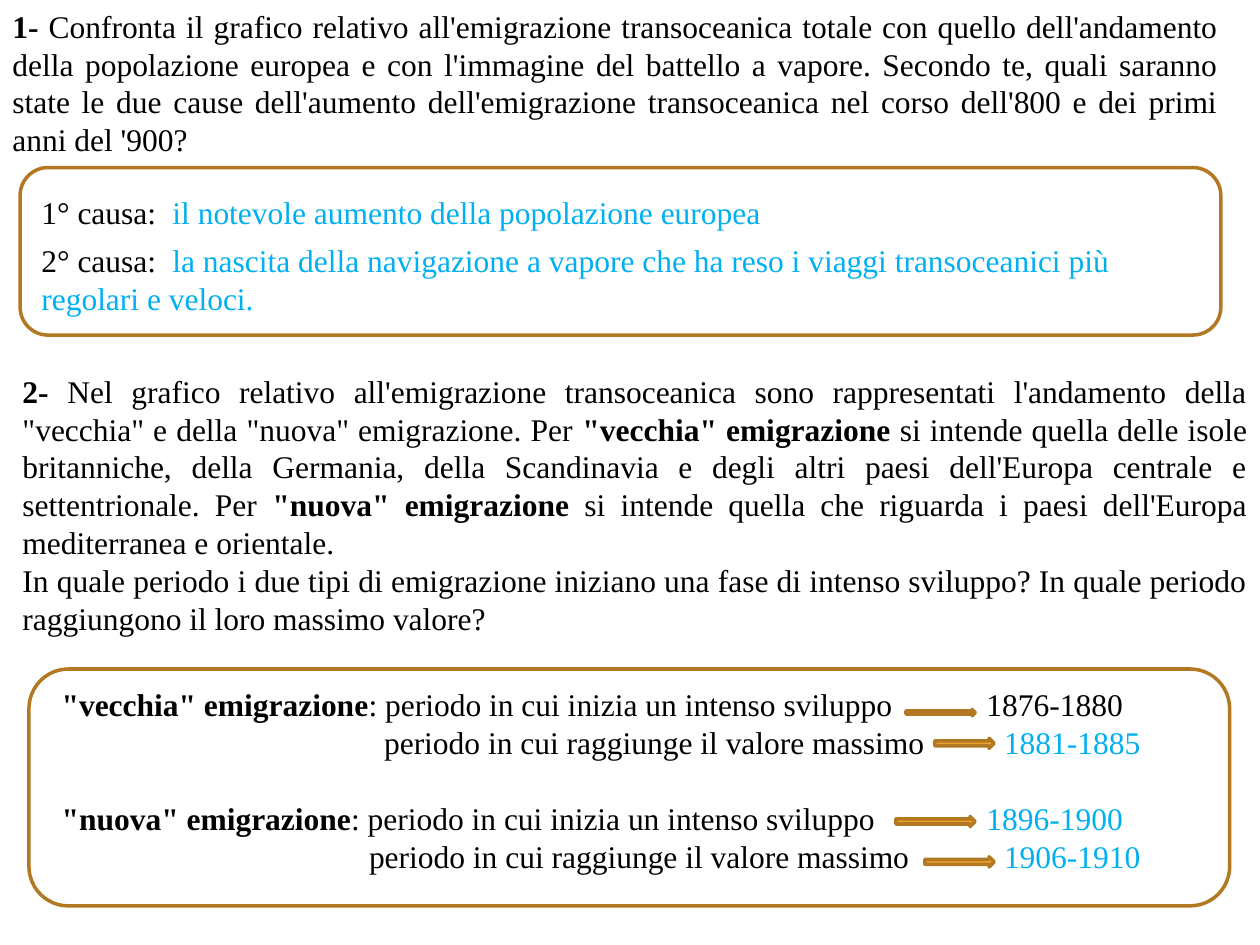
from lxml.etree import SubElement
from pptx import Presentation
from pptx.dml.color import RGBColor as Rgb
from pptx.enum.shapes import MSO_SHAPE as Shape
from pptx.enum.text import MSO_ANCHOR as Anchor, PP_ALIGN as Align
from pptx.oxml.ns import qn
from pptx.util import Inches, Pt

WIDE, HIGH = Inches(10), Inches(7.5)
FONT, SIZE = "Times New Roman", 18
INK = {"text": "000000", "reply": "00B0F0", "edge": "B27822",
       "arrow": "F0A22E", "paper": "FFFFFF"}


def hue(name):
    return Rgb.from_string(INK[name])


def place(left, top, width, height):
    """Turn percent of the slide's width and height into lengths."""
    return [round(share * side / 100) for share, side
            in zip((left, top, width, height), (WIDE, HIGH, WIDE, HIGH))]


def add_form(slide, kind, spot, fill):
    form = slide.shapes.add_shape(kind, *place(*spot))
    form.shadow.inherit = False
    form.fill.solid()
    form.fill.fore_color.rgb = hue(fill)
    form.line.color.rgb = hue("edge")
    form.line.width = Pt(2)


def set_tabs(para, stops):
    tabs = SubElement(para._p.get_or_add_pPr(), qn("a:tabLst"))
    for stop in stops:
        SubElement(tabs, qn("a:tab"), pos=str(Inches(stop)), algn="l")


def fill_para(para, parts):
    """Write (text, style) parts; the style is plain, bold or reply."""
    for text, style in parts:
        run = para.add_run()
        run.text = text
        run.font.name = FONT
        run.font.size = Pt(SIZE)
        run.font.bold = style == "bold"
        run.font.color.rgb = hue("reply" if style == "reply" else "text")


def add_text(slide, spot, lines, align=Align.LEFT, anchor=Anchor.MIDDLE):
    """Add a text box; each line holds parts, tab stops, space before."""
    frame = slide.shapes.add_textbox(*place(*spot)).text_frame
    frame.word_wrap = True
    frame.vertical_anchor = anchor
    for num, (parts, stops, gap) in enumerate(lines):
        para = frame.add_paragraph() if num else frame.paragraphs[0]
        para.alignment = align
        if gap:
            para.space_before = Pt(gap)
        if stops:
            set_tabs(para, stops)
        fill_para(para, parts)


def add_task(slide, spot, *paras):
    add_text(slide, spot, [(parts, (), 0) for parts in paras], Align.JUSTIFY)


def add_cause(slide, spot, *causes):
    lines = [([(f"{num}° causa:\t", "plain"), (cause, "reply")],
              [1.04], 6 if num > 1 else 0)
             for num, cause in enumerate(causes, 1)]
    add_text(slide, spot, lines)


def add_dates(slide, spot, groups):
    """List the start and peak of each group, with the dates at tab stops."""
    lines = []
    for num, (name, start, peak, style, indent) in enumerate(groups):
        lines += [
            ([(f'"{name}" emigrazione', "bold"),
              (": periodo in cui inizia un intenso sviluppo\t", "plain"),
              (start, style)], [7.34], 22 if num else 0),
            ([("\tperiodo in cui raggiunge il valore massimo\t", "plain"),
              (peak, "reply")], [indent, 7.48], 0)]
    add_text(slide, spot, lines, anchor=Anchor.TOP)


def main():
    deck = Presentation()
    deck.slide_width, deck.slide_height = WIDE, HIGH
    slide = deck.slides.add_slide(deck.slide_layouts[6])

    add_task(slide, (0, 0, 97.7, 17.47), [
        ("1- ", "bold"),
        ("Confronta il grafico relativo all'emigrazione transoceanica totale "
         "con quello dell'andamento della popolazione europea e con "
         "l'immagine del battello a vapore. Secondo te, quali saranno state "
         "le due cause dell'aumento dell'emigrazione transoceanica nel corso "
         "dell'800 e dei primi anni del '900?", "plain")])
    add_form(slide, Shape.ROUNDED_RECTANGLE, (1.6, 17.73, 95.3, 17.73), "paper")
    add_cause(slide, (2.3, 19.73, 93.8, 14.53),
              "il notevole aumento della popolazione europea",
              "la nascita della navigazione a vapore che ha reso i viaggi "
              "transoceanici più regolari e veloci.")

    add_task(slide, (0.8, 38.53, 99.2, 29.6), [
        ("2- ", "bold"),
        ("Nel grafico relativo all'emigrazione transoceanica sono "
         "rappresentati l'andamento della \"vecchia\" e della \"nuova\" "
         "emigrazione. Per ", "plain"),
        ('"vecchia" emigrazione', "bold"),
        (" si intende quella delle isole britanniche, della Germania, della "
         "Scandinavia e degli altri paesi dell'Europa centrale e "
         "settentrionale. Per ", "plain"),
        ('"nuova" emigrazione', "bold"),
        (" si intende quella che riguarda i paesi dell'Europa mediterranea "
         "e orientale.", "plain")], [
        ("In quale periodo i due tipi di emigrazione iniziano una fase di "
         "intenso sviluppo? In quale periodo raggiungono il loro massimo "
         "valore?", "plain")])
    add_form(slide, Shape.ROUNDED_RECTANGLE, (2.3, 70.8, 95.3, 25.07), "paper")
    add_dates(slide, (3.9, 71.87, 93.8, 25.6), [
        ("vecchia", "1876-1880", "1881-1885", "plain", 2.56),
        ("nuova", "1896-1900", "1906-1910", "reply", 2.44)])

    for spot in ((71.9, 75.07, 5.5, 0.67), (74.2, 78.13, 4.7, 1.07),
                 (71.1, 86.4, 6.3, 1.07), (73.4, 90.67, 5.5, 1.07)):
        add_form(slide, Shape.RIGHT_ARROW, spot, "arrow")

    deck.save("out.pptx")


if __name__ == "__main__":
    main()
